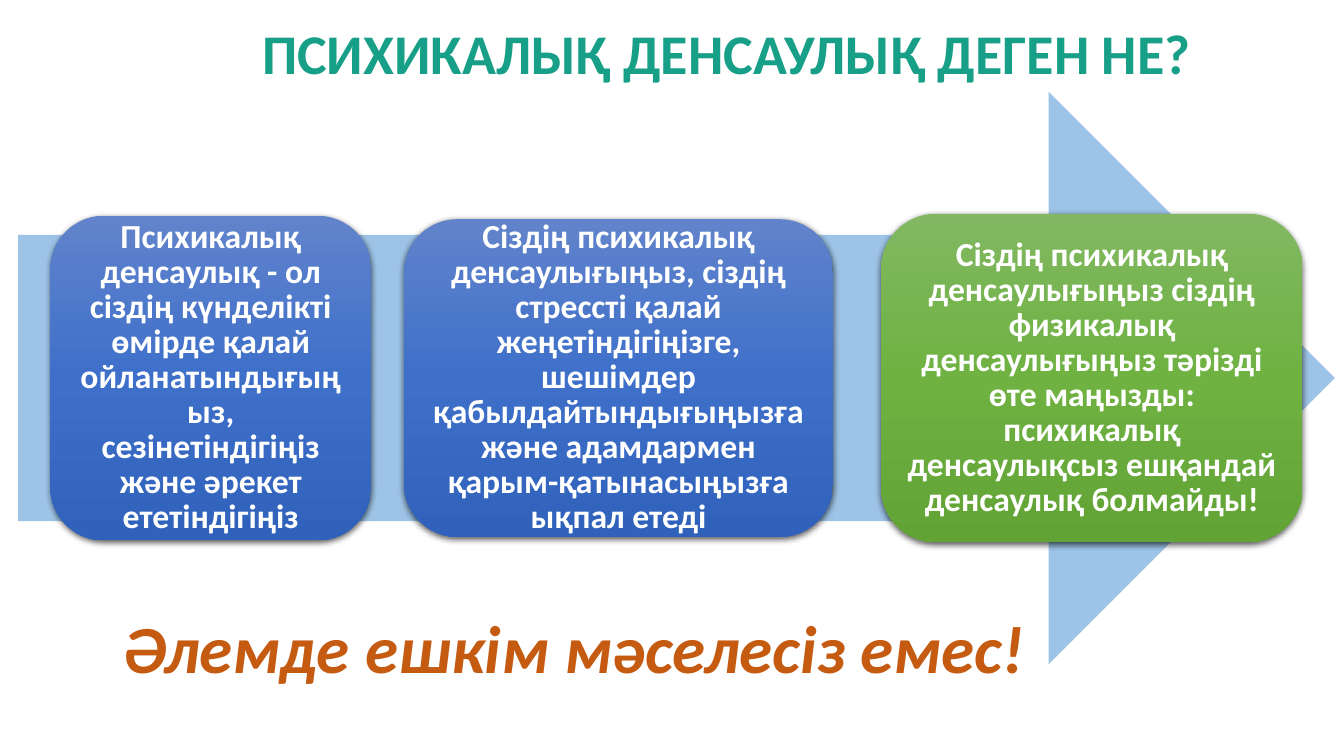
from copy import deepcopy

from lxml.etree import SubElement
from pptx import Presentation
from pptx.dml.color import RGBColor as Color
from pptx.enum.shapes import MSO_SHAPE as Shape
from pptx.enum.text import MSO_ANCHOR as Anchor, MSO_AUTO_SIZE as AutoSize, PP_ALIGN as Align
from pptx.oxml.ns import qn
from pptx.util import Inches, Pt

THEME = {
    "font": "Calibri",
    "title": "189F87",
    "arrow": "9DC3E6",
    "blue": ("6183CB", "3E70CA", "3062BB"),
    "green": ("81B861", "6FB242", "62A336"),
    "card_text": "FFFFFF",
    "motto": "C55A11",
    "title_size": 40,
    "card_size": 24,
    "motto_size": 48,
}
WIDTH, HEIGHT = 13.33, 7.5
MIDDLE = HEIGHT / 2

# Left, width, height, inset, colours and text of each card
CARDS = [
    (0.5, 3.18, 3.22, 0.1, "blue",
     "Психикалық денсаулық - ол сіздің күнделікті өмірде қалай "
     "ойланатындығыңыз, сезінетіндігіңіз және әрекет ететіндігіңіз"),
    (4.01, 4.25, 3.15, 0.07, "blue",
     "Сіздің психикалық денсаулығыңыз, сіздің стрессті қалай жеңетіндігіңізге, "
     "шешімдер қабылдайтындығыңызға және адамдармен қарым-қатынасыңызға ықпал етеді"),
    (8.74, 4.18, 3.26, 0.1, "green",
     "Сіздің психикалық денсаулығыңыз сіздің физикалық денсаулығыңыз тәрізді "
     "өте маңызды: психикалық денсаулықсыз ешқандай денсаулық болмайды!"),
]


def write(shape, text, role, spacing, inset, anchor=Anchor.MIDDLE):
    frame = shape.text_frame
    frame.text = text
    frame.word_wrap = True
    frame.auto_size = AutoSize.NONE
    frame.vertical_anchor = anchor
    frame.margin_left = frame.margin_right = Inches(inset)
    frame.margin_top = frame.margin_bottom = Inches(min(inset, 0.1))
    para = frame.paragraphs[0]
    para.alignment = Align.CENTER
    para.line_spacing = spacing
    para.space_before = Pt(0)
    font = para.runs[0].font
    font.name = THEME["font"]
    font.size = Pt(THEME[role.replace("_text", "") + "_size"])
    font.bold = True
    font.color.rgb = Color.from_string(THEME[role])
    return para


def place(shape, left, top, width, height):
    shape.left, shape.top = Inches(left), Inches(top)
    shape.width, shape.height = Inches(width), Inches(height)


deck = Presentation()
deck.slide_width, deck.slide_height = Inches(WIDTH), Inches(HEIGHT)
page = deck.slides.add_slide(deck.slide_layouts[1])

# Title
title = page.shapes.title
place(title, 2.3, 0.1, 9.81, 0.72)
write(title, "ПСИХИКАЛЫҚ ДЕНСАУЛЫҚ ДЕГЕН НЕ?", "title", Pt(54.2), 0, Anchor.TOP)

# Motto in the body placeholder, without its bullet
motto = page.placeholders[1]
place(motto, 0, 5.9, 11.38, 1.14)
para = write(motto, "Әлемде ешкім мәселесіз емес!", "motto", 0.9, 0.1)
para.runs[0].font.italic = True
settings = para._p.get_or_add_pPr()
settings.set("marL", "0")
settings.set("indent", "0")
SubElement(settings, qn("a:buNone"))

# Wide arrow behind the cards
arrow = page.shapes.add_shape(Shape.RIGHT_ARROW, 0, 0, 0, 0)
place(arrow, 0.18, MIDDLE - 2.84, 13.06, 5.68)
arrow.shadow.inherit = False
arrow.fill.solid()
arrow.fill.fore_color.rgb = Color.from_string(THEME["arrow"])
arrow.line.fill.background()

# Cards centred on the arrow
for left, width, height, inset, palette, text in CARDS:
    card = page.shapes.add_shape(Shape.ROUNDED_RECTANGLE, 0, 0, 0, 0)
    place(card, left, MIDDLE - height / 2, width, height)
    write(card, text, "card_text", Pt(25), inset)
    card.line.fill.background()

    # Three-stop gradient from top to bottom
    card.fill.gradient()
    card.fill.gradient_angle = 270
    properties = card._element.spPr
    stop_list = properties.find(".//" + qn("a:gsLst"))
    stop_list.append(deepcopy(stop_list[0]))
    for index, (stop, colour) in enumerate(zip(card.fill.gradient_stops, THEME[palette])):
        stop.position = index / 2
        stop.color.rgb = Color.from_string(colour)

    # Soft shadow below
    card.shadow.inherit = False
    shadow = SubElement(properties.find(qn("a:effectLst")), qn("a:outerShdw"),
                        blurRad=str(Pt(4.5)), dist=str(Pt(1.5)), dir="5400000",
                        algn="ctr", rotWithShape="0")
    shade = SubElement(shadow, qn("a:srgbClr"), val="000000")
    SubElement(shade, qn("a:alpha"), val="63000")

deck.save("out.pptx")
